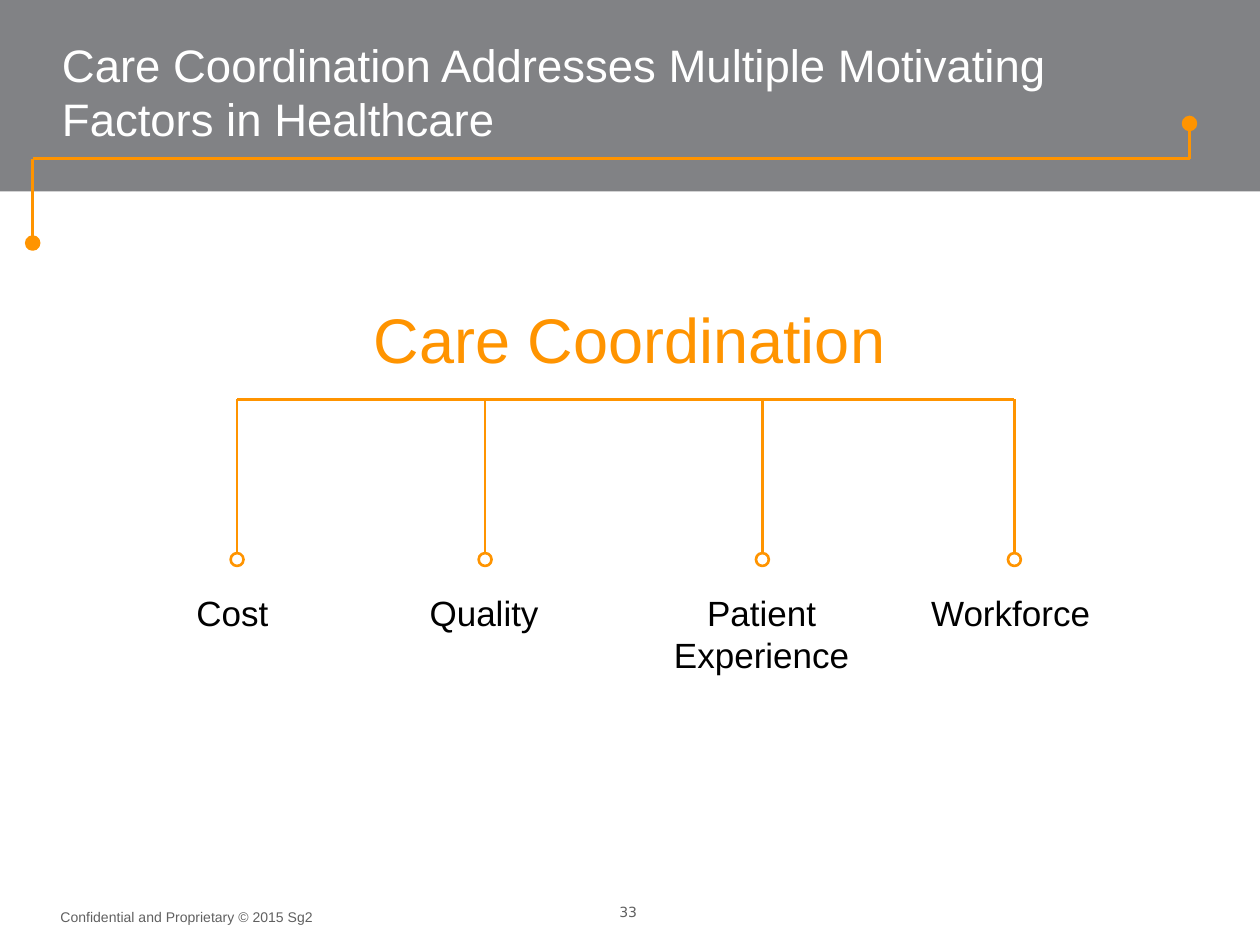
from lxml import etree
from pptx import Presentation
from pptx.dml.color import RGBColor
from pptx.enum.shapes import MSO_CONNECTOR, MSO_SHAPE
from pptx.enum.text import MSO_ANCHOR, PP_ALIGN
from pptx.oxml.ns import qn
from pptx.util import Cm, Pt

RECTANGLE, OVAL = MSO_SHAPE.RECTANGLE, MSO_SHAPE.OVAL
STRAIGHT = MSO_CONNECTOR.STRAIGHT
LEFT, CENTER = PP_ALIGN.LEFT, PP_ALIGN.CENTER
TOP, BOTTOM = MSO_ANCHOR.TOP, MSO_ANCHOR.BOTTOM

ORANGE, GRAY, DARK_GRAY = "FF9400", "818285", "606060"
WHITE, BLACK = "FFFFFF", "000000"
LINE_WIDTH = Pt(1.5)
DOT_SIZE = 0.26

# Bracket heights, in centimetres
BRACKET_TOP, BRACKET_BOTTOM = 8.05, 11.28
LABEL_TOP = 11.79

# Factor, branch position, label left, width, height, alignment
FACTORS = [
    ("Cost", 4.78, 3.71, 2.41, 1.12, LEFT),
    ("Quality", 9.78, 8.41, 2.72, 1.12, LEFT),
    ("Patient Experience", 15.37, 12.93, 4.85, 1.96, CENTER),
    ("Workforce", 20.45, 18.52, 3.89, 1.12, LEFT),
]


def color(hex_string):
    return RGBColor.from_string(hex_string)


def add_shape(slide, kind, left, top, width, height, fill, outline=None):
    shape = slide.shapes.add_shape(kind, Cm(left), Cm(top), Cm(width), Cm(height))
    shape.shadow.inherit = False
    shape.fill.solid()
    shape.fill.fore_color.rgb = color(fill)
    if outline:
        shape.line.color.rgb = color(outline)
        shape.line.width = LINE_WIDTH
    else:
        shape.line.fill.background()


def add_dot(slide, center_x, center_y, fill):
    add_shape(slide, OVAL, center_x - DOT_SIZE / 2, center_y - DOT_SIZE / 2,
              DOT_SIZE, DOT_SIZE, fill, ORANGE)


def add_line(slide, start_x, start_y, end_x, end_y):
    line = slide.shapes.add_connector(
        STRAIGHT, Cm(start_x), Cm(start_y), Cm(end_x), Cm(end_y))
    line.line.color.rgb = color(ORANGE)
    line.line.width = LINE_WIDTH
    etree.SubElement(line._element.spPr, qn("a:effectLst"))


def add_text(slide, text, left, top, width, height, size, font_color,
             align=LEFT, anchor=TOP, font_name="Arial", wrap=True, inset=0.13):
    box = slide.shapes.add_textbox(Cm(left), Cm(top), Cm(width), Cm(height))
    frame = box.text_frame
    frame.word_wrap = wrap
    frame.vertical_anchor = anchor
    frame.margin_top = frame.margin_bottom = Cm(inset)
    paragraph = frame.paragraphs[0]
    paragraph.alignment = align
    run = paragraph.add_run()
    run.text = text
    run.font.size = Pt(size)
    run.font.name = font_name
    run.font.color.rgb = color(font_color)


def add_header(slide):
    add_shape(slide, RECTANGLE, 0, 0, 25.4, 3.86, GRAY)
    left, right, rule_y = 0.66, 23.98, 3.2
    dot_high, dot_low = 2.49, 4.9
    add_line(slide, left, rule_y, right, rule_y)
    add_line(slide, right, rule_y, right, dot_high)
    add_line(slide, left, rule_y, left, dot_low)
    add_dot(slide, right, dot_high, ORANGE)
    add_dot(slide, left, dot_low, ORANGE)
    add_text(slide, "Care Coordination Addresses Multiple Motivating Factors in Healthcare",
             1, 0.4, 23.1, 2.67, 26, WHITE, anchor=BOTTOM)


def add_factor_tree(slide):
    add_text(slide, "Care Coordination", 7.29, 5.92, 11.13, 1.8, 36, ORANGE)
    add_line(slide, FACTORS[0][1], BRACKET_TOP, FACTORS[-1][1], BRACKET_TOP)
    for name, branch_x, left, width, height, align in FACTORS:
        add_line(slide, branch_x, BRACKET_TOP, branch_x, BRACKET_BOTTOM)
        add_dot(slide, branch_x, BRACKET_BOTTOM, WHITE)
        add_text(slide, name, left, LABEL_TOP, width, height, 20, BLACK, align)


def add_footer(slide):
    add_text(slide, "Confidential and Proprietary © 2015 Sg2",
             0.97, 17.96, 10.72, 0.86, 8, DARK_GRAY, anchor=BOTTOM, inset=0.25)
    add_text(slide, "33", 12.17, 18.08, 0.99, 0.61, 8, DARK_GRAY, CENTER,
             font_name="DejaVu Sans", wrap=False)


def main():
    presentation = Presentation()
    presentation.slide_width = Cm(25.4)
    presentation.slide_height = Cm(19.05)
    slide = presentation.slides.add_slide(presentation.slide_layouts[6])
    add_header(slide)
    add_factor_tree(slide)
    add_footer(slide)
    presentation.save("out.pptx")


if __name__ == "__main__":
    main()
